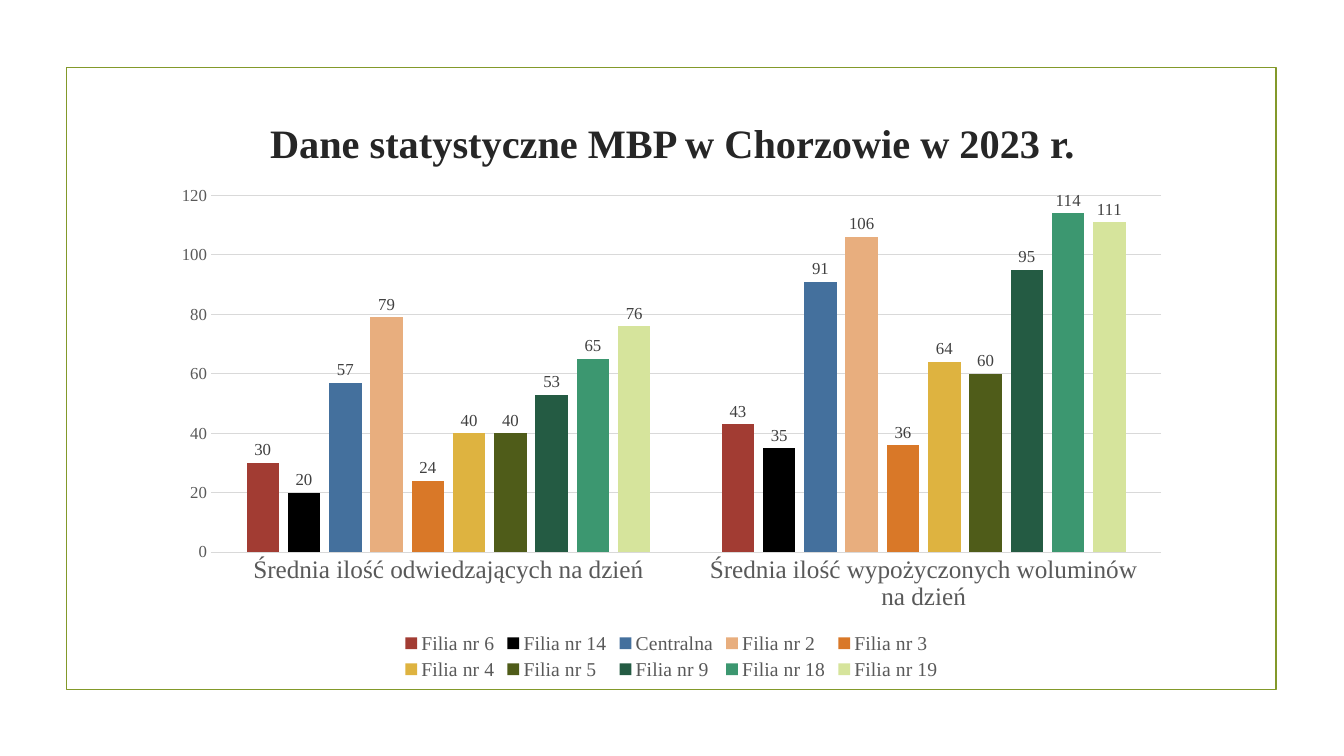
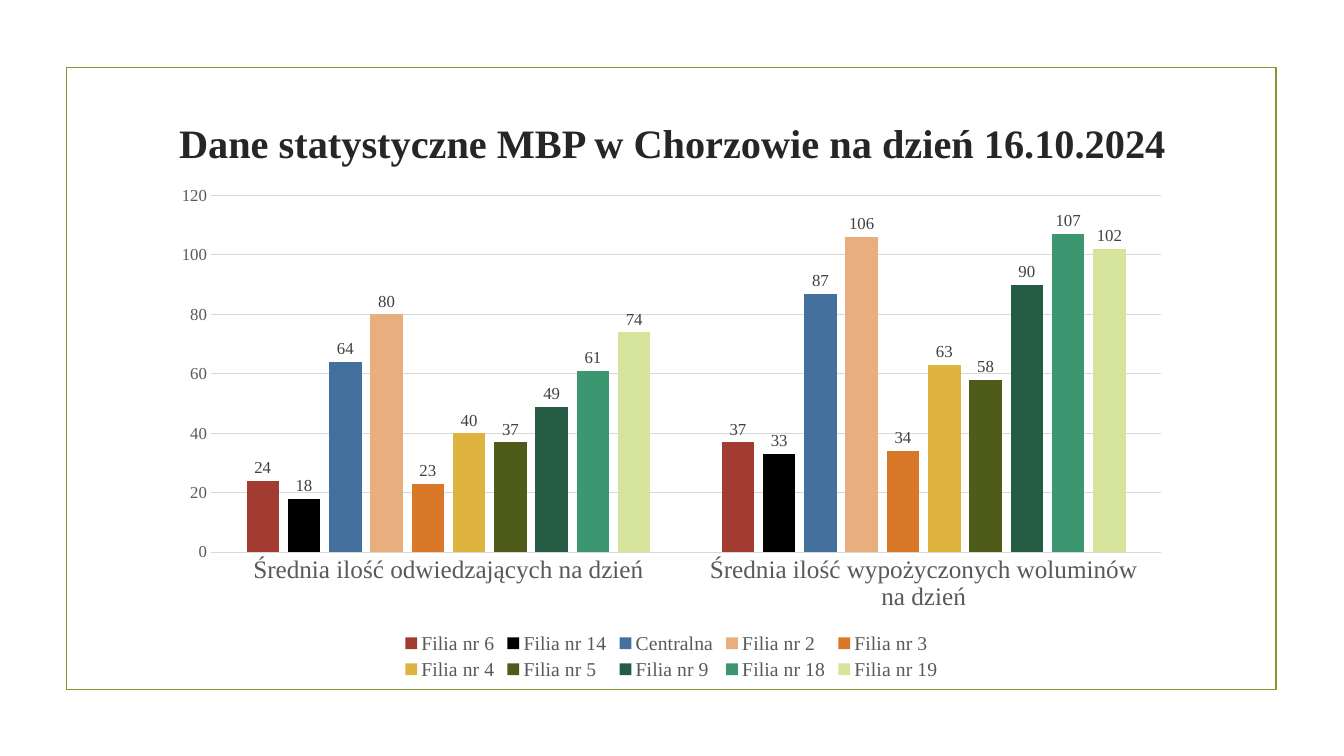
from pptx import Presentation
from pptx.chart.data import CategoryChartData as ChartData
from pptx.dml.color import RGBColor
from pptx.enum.chart import XL_CHART_TYPE as Kind, XL_LABEL_POSITION as Spot
from pptx.enum.chart import XL_LEGEND_POSITION as Side, XL_TICK_MARK as Tick
from pptx.enum.shapes import MSO_SHAPE as Form
from pptx.enum.text import MSO_ANCHOR as Anchor, PP_ALIGN as Align
from pptx.util import Inches, Pt

FACE = "Times New Roman"
GREEN, INK, GREY, DARK, PALE = "83992A", "262626", "595959", "404040", "D9D9D9"

# Library branches and their bar colours
BARS = {
    "Filia nr 6": "A23C33", "Filia nr 14": "000000",
    "Centralna": "44709D", "Filia nr 2": "E8AE7E",
    "Filia nr 3": "D97828", "Filia nr 4": "DEB340",
    "Filia nr 5": "4F5C19", "Filia nr 9": "245B43",
    "Filia nr 18": "3C9770", "Filia nr 19": "D6E49C",
}
GROUPS = ["Średnia ilość odwiedzających na dzień",
          "Średnia ilość wypożyczonych woluminów na dzień"]

# Title, visitors per branch, loans per branch
PAGES = [
    ("Dane statystyczne MBP w Chorzowie w 2023 r.",
     [30, 20, 57, 79, 24, 40, 40, 53, 65, 76],
     [43, 35, 91, 106, 36, 64, 60, 95, 114, 111]),
    ("Dane statystyczne MBP w Chorzowie na dzień 16.10.2024",
     [24, 18, 64, 80, 23, 40, 37, 49, 61, 74],
     [37, 33, 87, 106, 34, 63, 58, 90, 107, 102]),
]


def paint(item, tint):
    """Give a fill or line one solid colour."""
    item.solid()
    item.fore_color.rgb = RGBColor.from_string(tint)


def style(font, size, tint, bold=False):
    font.name, font.size, font.bold = FACE, Pt(size), bold
    font.color.rgb = RGBColor.from_string(tint)


deck = Presentation()
deck.slide_width, deck.slide_height = Inches(13.33), Inches(7.5)

for title, visits, loans in PAGES:
    slide = deck.slides.add_slide(deck.slide_layouts[6])
    paint(slide.background.fill, "FFFFFF")

    # Frame
    frame = slide.shapes.add_shape(Form.RECTANGLE, Inches(0.66), Inches(0.67),
                                   Inches(12), Inches(6.17))
    frame.shadow.inherit = False
    frame.fill.background()
    paint(frame.line.fill, GREEN)
    frame.line.width = Pt(1.25)

    # Title
    box = slide.shapes.add_textbox(Inches(1.42), Inches(1.07),
                                   Inches(10.5), Inches(0.54))
    text = box.text_frame
    text.word_wrap = True
    text.vertical_anchor = Anchor.TOP
    text.margin_top, text.margin_bottom = Inches(0.1), 0
    line = text.paragraphs[0]
    line.alignment = Align.CENTER
    run = line.add_run()
    run.text = title
    style(run.font, 28.8, INK, True)

    # Chart
    data = ChartData()
    data.categories = GROUPS
    for name, *pair in zip(BARS, visits, loans):
        data.add_series(name, pair)
    chart = slide.shapes.add_chart(Kind.COLUMN_CLUSTERED, Inches(1.6), Inches(1.75),
                                   Inches(10.12), Inches(5.04), data).chart
    style(chart.font, 10, "000000")
    chart.has_title = False
    chart.has_legend = True
    chart.legend.position = Side.BOTTOM
    chart.legend.include_in_layout = False
    style(chart.legend.font, 14, GREY)

    # Bars and value labels
    plot = chart.plots[0]
    plot.gap_width, plot.overlap = 219, -27
    plot.vary_by_categories = False
    for bar, tint in zip(plot.series, BARS.values()):
        paint(bar.format.fill, tint)
        bar.invert_if_negative = False
        tags = bar.data_labels
        tags.show_value = True
        tags.position = Spot.OUTSIDE_END
        style(tags.font, 12, DARK)

    # Axes
    base, scale = chart.category_axis, chart.value_axis
    for axis, size in ((base, 18), (scale, 12)):
        axis.major_tick_mark = axis.minor_tick_mark = Tick.NONE
        style(axis.tick_labels.font, size, GREY)
    scale.minimum_scale, scale.maximum_scale, scale.major_unit = 0, 120, 20
    scale.format.line.fill.background()
    scale.has_major_gridlines = True
    for rule in (base.format.line, scale.major_gridlines.format.line):
        paint(rule.fill, PALE)
        rule.width = Pt(0.75)

deck.save("out.pptx")
